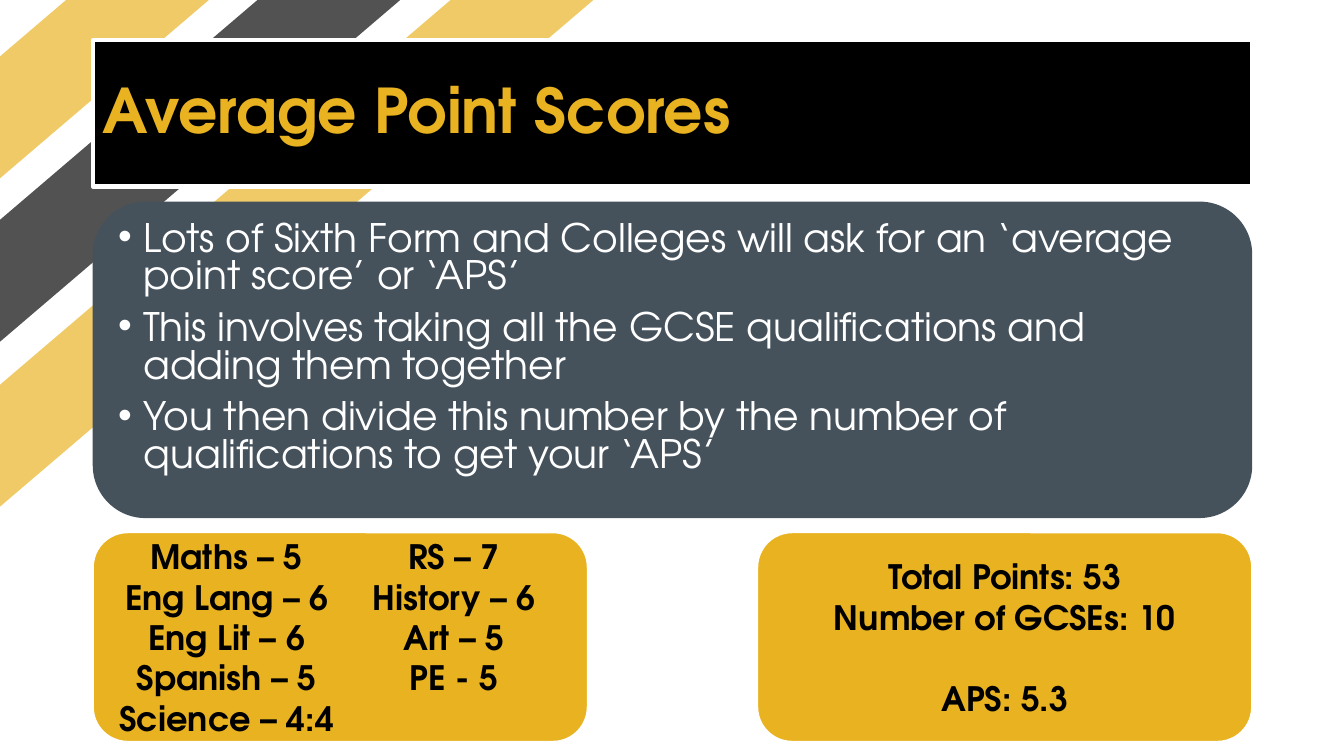
from lxml import etree
from pptx import Presentation
from pptx.dml.color import RGBColor
from pptx.enum.shapes import MSO_SHAPE as Shape
from pptx.enum.text import MSO_ANCHOR as Anchor, PP_ALIGN as Align
from pptx.oxml.ns import qn
from pptx.util import Inches, Pt

FONT = "TeX Gyre Adventor"
GOLD, BLACK, WHITE, SLATE = "E9B220", "000000", "FFFFFF", "45525C"
WIDTH, HEIGHT = 13.33, 7.5
LEFT, CONTENT_WIDTH = 0.92, 11.5
CARD_WIDTH = 4.91

BANDS = [  # left, top, width, colour
    (-2.52, 0.23, 6.15, GOLD),
    (-1.5, 0.98, 6.15, BLACK),
    (-1.82, 1.75, 8.82, GOLD),
]
POINTS = [
    "Lots of Sixth Form and Colleges will ask for an ‘average point score’ or ‘APS’",
    "This involves taking all the GCSE qualifications and adding them together",
    "You then divide this number by the number of qualifications to get your ‘APS’",
]
GRADES = ["Maths – 5", "Eng Lang – 6", "Eng Lit – 6", "Spanish – 5", "Science – 4:4",
          "RS – 7", "History – 6", "Art – 5", "PE - 5"]
TOTALS = ["Total Points: 53", "Number of GCSEs: 10", "APS: 5.3"]


def colour(value):
    return RGBColor.from_string(value)


def add_panel(slide, kind, box, fill, line=None, line_width=0):
    panel = slide.shapes.add_shape(kind, *(Inches(length) for length in box))
    panel.shadow.inherit = False
    panel.fill.solid()
    panel.fill.fore_color.rgb = colour(fill)
    if line:
        panel.line.color.rgb = colour(line)
        panel.line.width = Pt(line_width)
    else:
        panel.line.fill.background()
    return panel


def write_lines(panel, lines, size, ink, bold, align, anchor):
    frame = panel.text_frame
    frame.word_wrap = True
    frame.vertical_anchor = anchor
    frame.text = "\n".join(lines)
    for paragraph in frame.paragraphs:
        paragraph.alignment = align
        for run in paragraph.runs:
            run.font.name = FONT
            run.font.size = Pt(size)
            run.font.bold = bold
            run.font.color.rgb = colour(ink)
    return frame


def add_bands(slide):
    """Draw the translucent diagonal stripes in the top left corner."""
    for left, top, width, fill in BANDS:
        band = add_panel(slide, Shape.RECTANGLE, (left, top, width, 0.92), fill)
        band.rotation = 319.5
        tint = band.fill._xPr.find(qn("a:solidFill"))[0]
        etree.SubElement(tint, qn("a:alpha"), val="68000")


def add_title(slide, box):
    banner = add_panel(slide, Shape.RECTANGLE, box, BLACK, WHITE, 3)
    frame = write_lines(banner, ["Average Point Scores"], 44, GOLD, True,
                        Align.LEFT, Anchor.MIDDLE)
    frame.paragraphs[0].line_spacing = 0.9


def add_explanation(slide, box):
    panel = add_panel(slide, Shape.ROUNDED_RECTANGLE, box, SLATE)
    frame = write_lines(panel, POINTS, 28, WHITE, False, Align.LEFT, Anchor.TOP)
    for index, paragraph in enumerate(frame.paragraphs):
        paragraph.line_spacing = 0.8
        if index:
            paragraph.space_before = Pt(10)
        properties = paragraph._p.get_or_add_pPr()
        properties.set("marL", str(Inches(0.25)))
        properties.set("indent", str(-Inches(0.25)))
        etree.SubElement(properties, qn("a:buFont"), typeface="Arial")
        etree.SubElement(properties, qn("a:buChar"), char="•")


def add_card(slide, box, lines):
    card = add_panel(slide, Shape.ROUNDED_RECTANGLE, box, GOLD, WHITE, 1.5)
    return write_lines(card, lines, 24, BLACK, True, Align.CENTER, Anchor.MIDDLE)


def add_example(slide, left, top, width, height):
    """Place the grades at the left end and the totals at the right end."""
    grades = add_card(slide, (left, top, CARD_WIDTH, height), GRADES)
    grades._txBody.bodyPr.set("numCol", "2")
    totals = add_card(slide, (left + width - CARD_WIDTH, top, CARD_WIDTH, height), TOTALS)
    totals.paragraphs[-1].space_before = Pt(29)


def main():
    deck = Presentation()
    deck.slide_width, deck.slide_height = Inches(WIDTH), Inches(HEIGHT)
    slide = deck.slides.add_slide(deck.slide_layouts[6])
    add_bands(slide)
    add_title(slide, (LEFT, 0.4, CONTENT_WIDTH, 1.45))
    add_explanation(slide, (LEFT, 2, CONTENT_WIDTH, 3.14))
    add_example(slide, LEFT, 5.28, CONTENT_WIDTH, 2.08)
    deck.save("out.pptx")


if __name__ == "__main__":
    main()
